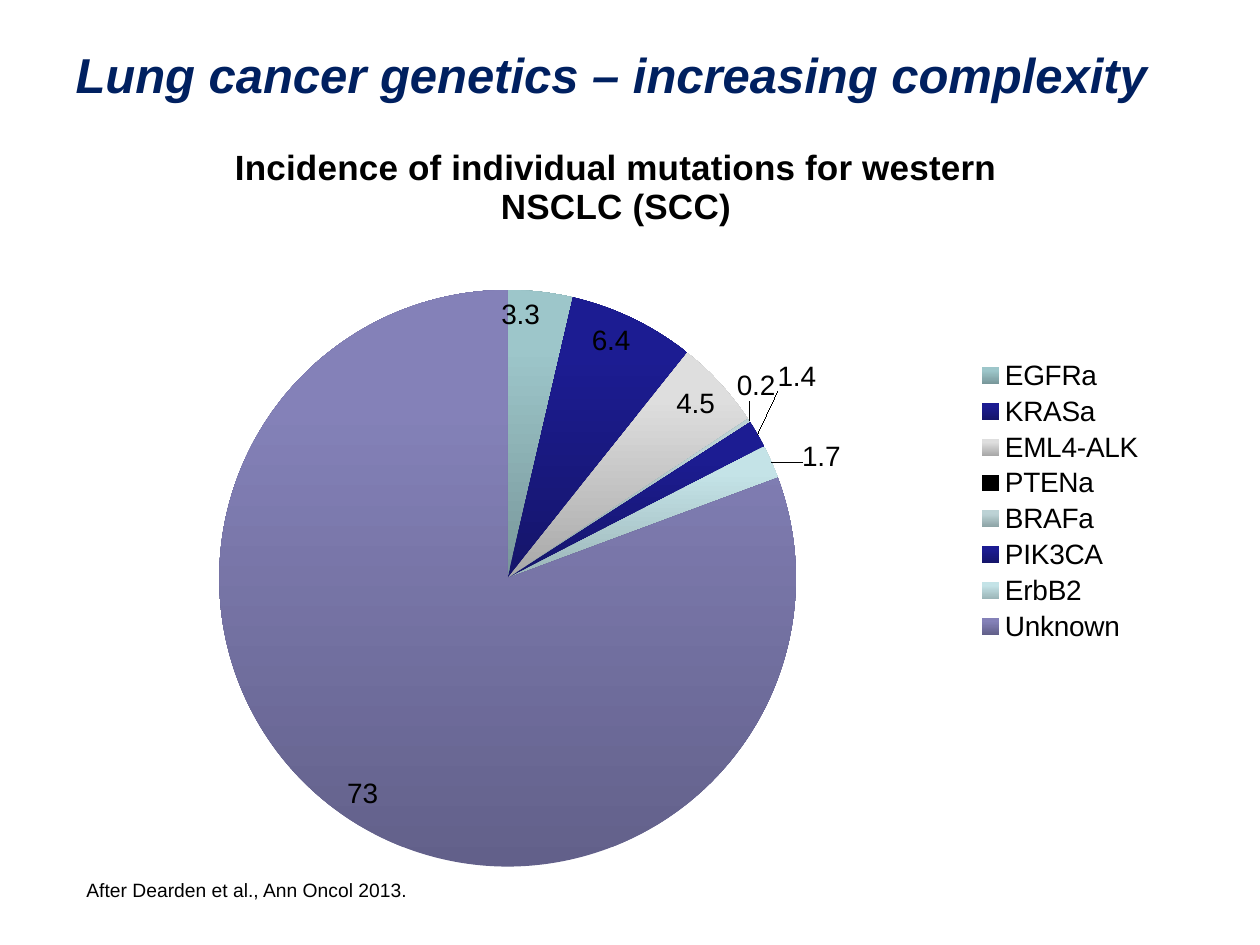
from dataclasses import dataclass

from lxml import etree
from pptx import Presentation
from pptx.chart.data import CategoryChartData
from pptx.dml.color import RGBColor
from pptx.enum.chart import XL_CHART_TYPE, XL_LABEL_POSITION, XL_LEGEND_POSITION
from pptx.enum.text import MSO_ANCHOR, MSO_AUTO_SIZE, PP_ALIGN
from pptx.oxml.ns import qn
from pptx.util import Emu, Pt

PIE = XL_CHART_TYPE.PIE
INSIDE_END = XL_LABEL_POSITION.INSIDE_END
LEGEND_RIGHT = XL_LEGEND_POSITION.RIGHT
TOP = MSO_ANCHOR.TOP
NO_AUTOFIT = MSO_AUTO_SIZE.NONE
LEFT = PP_ALIGN.LEFT
TITLE_ONLY = 5
PX = 914400 / 126


@dataclass(frozen=True)
class Theme:
    font: str = "Arial"
    navy: str = "002060"
    black: str = "000000"
    title_size: int = 28
    chart_title_size: int = 20
    chart_size: int = 16
    source_size: int = 11


THEME = Theme()

CHART_TITLE = "Incidence of individual mutations for western NSCLC (SCC)"
# Mutation, incidence, dark lower colour, light upper colour
MUTATIONS = [
    ("EGFRa", 3.3, "78979A", "9DC6CA"),
    ("KRASa", 6.4, "15156A", "1C1C92"),
    ("EML4-ALK", 4.5, "A8A8A8", "DEDEDE"),
    ("PTENa", 0, "000000", "000000"),
    ("BRAFa", 0.2, "8CA3A5", "BCD2D5"),
    ("PIK3CA", 1.4, "15156A", "1C1C92"),
    ("ErbB2", 1.7, "9BB5B8", "C4E3E7"),
    ("Unknown", 73, "62608A", "8481B8"),
]
# Small slices: label shift as a share of the chart's width and height
LABEL_SHIFTS = {4: (0.03, -0.07), 5: (0.06, -0.1), 6: (0.07, -0.03)}
EMPTY_SLICE = 3


def px(*lengths):
    return [Emu(round(length * PX)) for length in lengths]


def format_font(font, size, color=THEME.black, bold=False, italic=False):
    values = {"name": THEME.font, "size": Pt(size), "bold": bold, "italic": italic}
    for attribute, value in values.items():
        setattr(font, attribute, value)
    font.color.rgb = RGBColor.from_string(color)


def add_layout(parent, index, **values):
    layout = etree.Element(qn("c:layout"))
    manual = etree.SubElement(layout, qn("c:manualLayout"))
    for tag, value in values.items():
        etree.SubElement(manual, qn(f"c:{tag}")).set("val", str(value))
    parent.insert(index, layout)


def place_title(slide, box):
    heading = slide.shapes.title
    heading.left, heading.top, heading.width, heading.height = px(*box)
    frame = heading.text_frame
    frame.text = "Lung cancer genetics – increasing complexity"
    for attribute, value in {"auto_size": NO_AUTOFIT, "vertical_anchor": TOP,
                             "word_wrap": True}.items():
        setattr(frame, attribute, value)
    paragraph = frame.paragraphs[0]
    paragraph.alignment = LEFT
    format_font(paragraph.runs[0].font, THEME.title_size, THEME.navy, True, True)


def place_source(slide, box):
    frame = slide.shapes.add_textbox(*px(*box)).text_frame
    frame.word_wrap = True
    frame.text = "After Dearden et al., Ann Oncol 2013."
    format_font(frame.paragraphs[0].runs[0].font, THEME.source_size)


def color_slices(incidence):
    for index, (_, _, dark, light) in enumerate(MUTATIONS):
        fill = incidence.points[index].format.fill
        fill.gradient()
        fill.gradient_angle = 90
        for stop, color, position in zip(fill.gradient_stops, (dark, light), (0, 0.8)):
            stop.color.rgb = RGBColor.from_string(color)
            stop.position = position


def label_slices(incidence):
    labels = incidence.data_labels
    labels.show_value = True
    labels.position = INSIDE_END
    format_font(labels.font, THEME.chart_size)
    for index in (EMPTY_SLICE, *LABEL_SHIFTS):
        incidence.points[index].data_label.position = INSIDE_END
    for label in labels._element.findall(qn("c:dLbl")):
        index = int(label.find(qn("c:idx")).get("val"))
        if index == EMPTY_SLICE:
            for child in list(label)[1:]:
                label.remove(child)
            etree.SubElement(label, qn("c:delete")).set("val", "1")
        else:
            shift_x, shift_y = LABEL_SHIFTS[index]
            add_layout(label, 1, x=shift_x, y=shift_y)


def place_pie(slide, box):
    data = CategoryChartData()
    data.categories = [mutation[0] for mutation in MUTATIONS]
    data.add_series(CHART_TITLE, [mutation[1] for mutation in MUTATIONS])
    chart = slide.shapes.add_chart(PIE, *px(*box), data).chart
    format_font(chart.font, THEME.chart_size)

    # Chart title and legend
    chart.has_title = True
    chart_title = chart.chart_title.text_frame
    chart_title.text = CHART_TITLE
    format_font(chart_title.paragraphs[0].runs[0].font, THEME.chart_title_size, bold=True)
    chart.has_legend = True
    chart.legend.position = LEGEND_RIGHT
    chart.legend.include_in_layout = False
    format_font(chart.legend.font, THEME.chart_size)

    # Slices, labels and the pie's place within the chart
    plot = chart.plots[0]
    plot.vary_by_categories = True
    color_slices(plot.series[0])
    label_slices(plot.series[0])
    plot_area = chart._chartSpace.chart.plotArea
    for layout in plot_area.findall(qn("c:layout")):
        plot_area.remove(layout)
    add_layout(plot_area, 0, layoutTarget="inner", xMode="edge", yMode="edge",
               x=0.134, y=0.226, w=0.532, h=0.749)


def main():
    presentation = Presentation()
    presentation.slide_width, presentation.slide_height = px(1260, 945)
    slide = presentation.slides.add_slide(presentation.slide_layouts[TITLE_ONLY])
    place_title(slide, (63, 38, 1134, 157))
    place_source(slide, (74, 872, 973, 37))
    place_pie(slide, (74, 116, 1084, 770))
    presentation.save("out.pptx")


if __name__ == "__main__":
    main()
